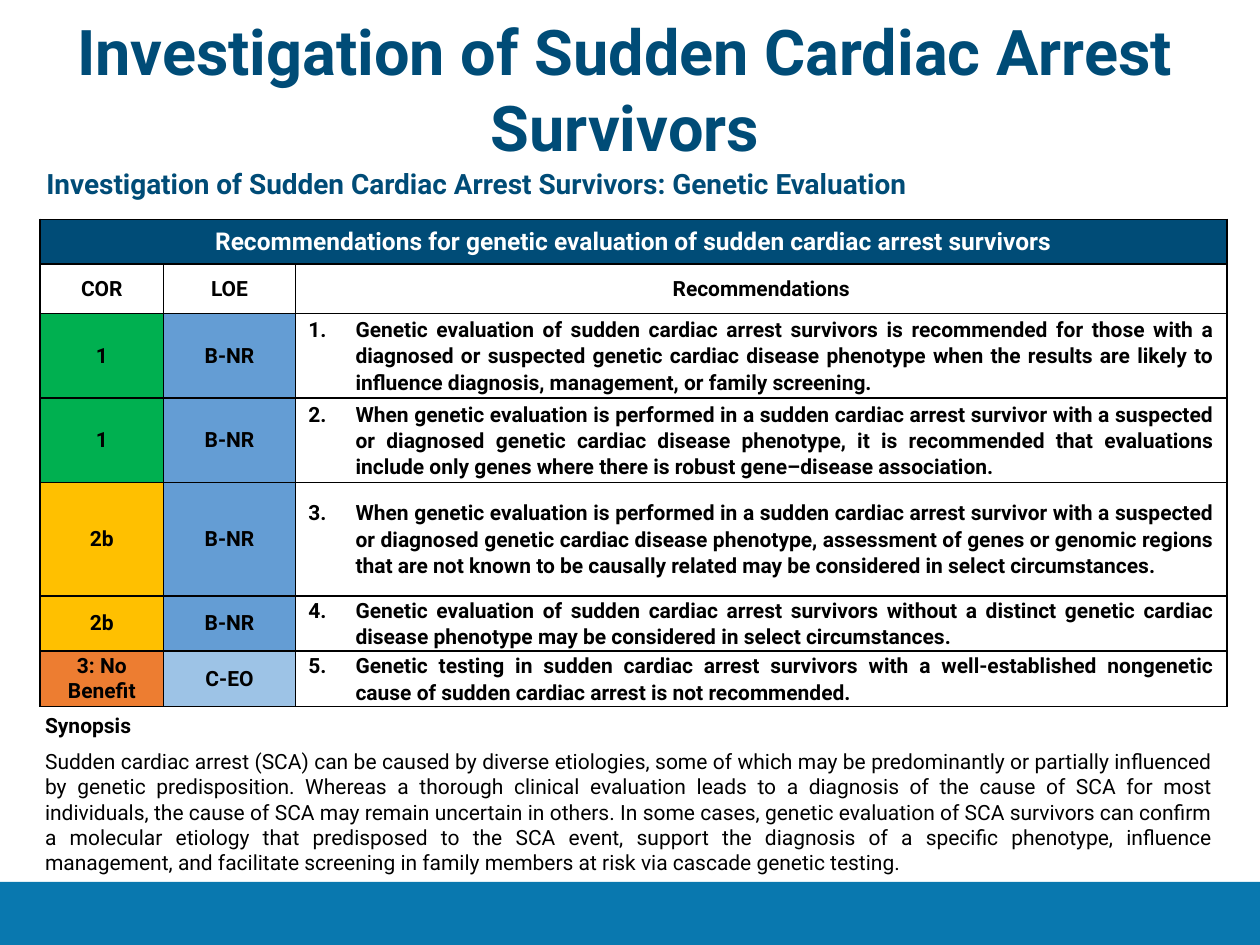
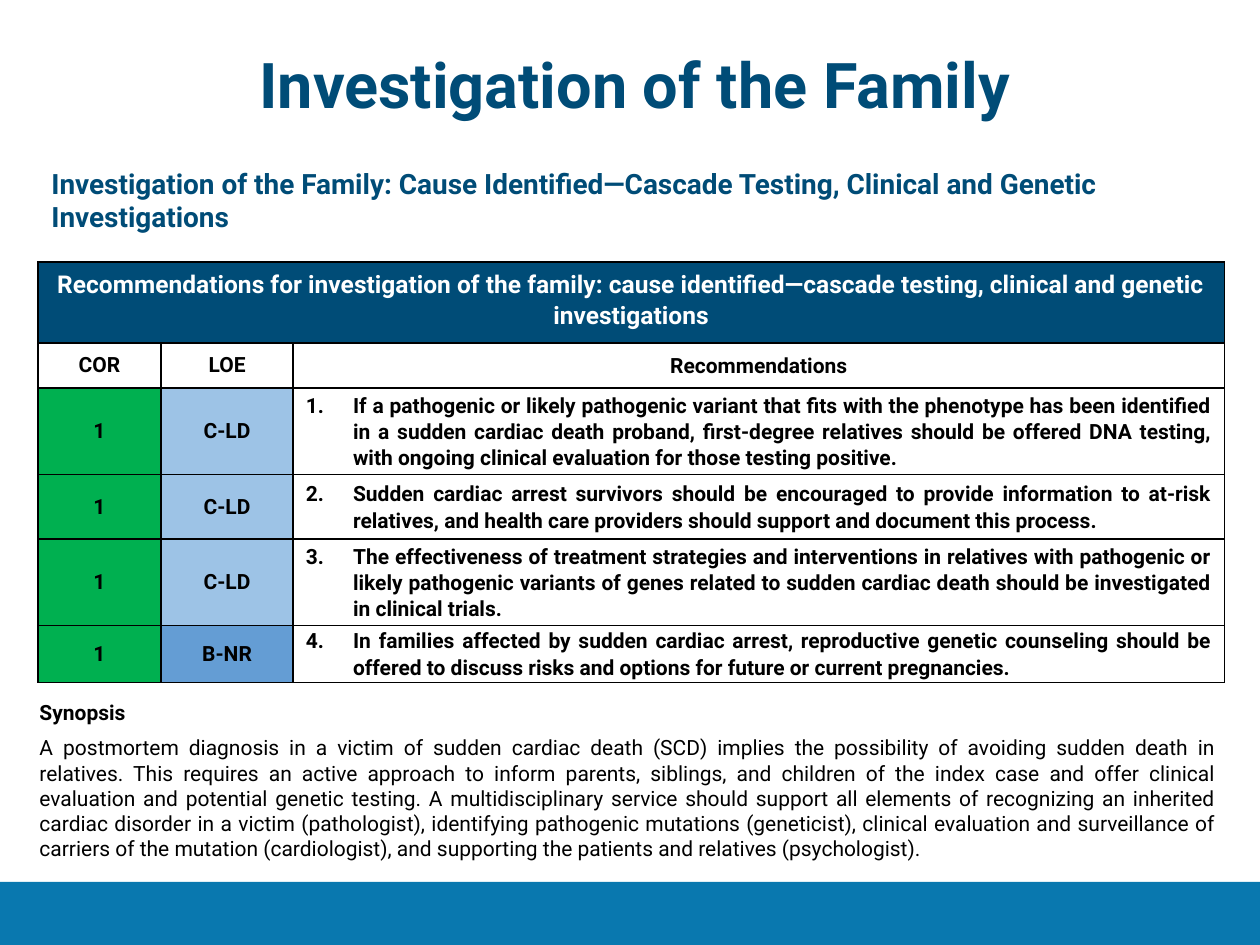
from lxml.etree import SubElement
from pptx import Presentation
from pptx.dml.color import RGBColor
from pptx.enum.shapes import MSO_SHAPE as Shape
from pptx.enum.text import MSO_ANCHOR as Anchor, MSO_AUTO_SIZE as Fit, PP_ALIGN as Align
from pptx.oxml.ns import qn
from pptx.util import Pt

FONT = "Roboto"
NAVY = RGBColor(0x00, 0x4C, 0x77)
BLUE = RGBColor(0x09, 0x78, 0xAF)
BLACK = RGBColor(0, 0, 0)
WHITE = RGBColor(255, 255, 255)
CLASS = {"1": RGBColor(0x00, 0xB0, 0x50), "2": RGBColor(0xFF, 0xC0, 0x00),
         "3": RGBColor(0xED, 0x7D, 0x31)}
LEVEL = {"B": RGBColor(0x64, 0x9D, 0xD4), "C": RGBColor(0x9D, 0xC3, 0xE6)}

WIDE, HIGH = 720, 540
BAND = (0, 504, WIDE, 36)
COLS = (70.4, 75.6, 532.1)
HEADS = ("COR", "LOE", "Recommendations")
HANG = 27
LOOSE = 1.07


def write(para, text, size, color=BLACK, bold=True, align=Align.LEFT):
    para.alignment = align
    run = para.add_run()
    run.text = text
    font = run.font
    font.name, font.size, font.bold = FONT, Pt(size), bold
    font.color.rgb = color


def add_text(slide, box):
    shape = slide.shapes.add_textbox(*map(Pt, box))
    frame = shape.text_frame
    frame.word_wrap = True
    frame.auto_size = Fit.SHAPE_TO_FIT_TEXT
    return frame


def add_band(slide):
    band = slide.shapes.add_shape(Shape.RECTANGLE, *map(Pt, BAND))
    band.shadow.inherit = False
    band.fill.solid()
    band.fill.fore_color.rgb = BLUE
    band.line.fill.background()


def add_title(slide, box, text):
    write(add_text(slide, box).paragraphs[0], text, 36, NAVY, align=Align.CENTER)


def add_topic(slide, box, text):
    write(add_text(slide, box).paragraphs[0], text, 16, NAVY)


def add_synopsis(slide, box, text):
    frame = add_text(slide, box)
    head, body = frame.paragraphs[0], frame.add_paragraph()
    head.space_after = body.space_after = Pt(6)
    write(head, "Synopsis", 12, align=Align.JUSTIFY)
    write(body, text, 12, bold=False, align=Align.JUSTIFY)


def style(cell, color=None, side=7.2, edge=0):
    """Give a cell its borders, fill and margins."""
    props = cell._tc.get_or_add_tcPr()
    for name in ("lnL", "lnR", "lnT", "lnB"):
        line = SubElement(props, qn(f"a:{name}"), w=str(Pt(1)))
        fill = SubElement(line, qn("a:solidFill"))
        SubElement(fill, qn("a:srgbClr"), val=str(BLACK))
    if color is None:
        cell.fill.background()
    else:
        cell.fill.solid()
        cell.fill.fore_color.rgb = color
    cell.margin_left = cell.margin_right = Pt(side)
    cell.margin_top = cell.margin_bottom = Pt(edge)


def label(cell, text, color=None):
    style(cell, color)
    cell.vertical_anchor = Anchor.MIDDLE
    write(cell.text_frame.paragraphs[0], text, 12, align=Align.CENTER)


def advise(cell, num, text):
    """Fill a cell with one numbered recommendation."""
    style(cell)
    cell.vertical_anchor = Anchor.MIDDLE
    para = cell.text_frame.paragraphs[0]
    para.line_spacing = LOOSE
    props = para._p.get_or_add_pPr()
    props.set("marL", str(Pt(HANG)))
    props.set("indent", str(-Pt(HANG)))
    SubElement(props, qn("a:buFont"), typeface="+mj-lt")
    SubElement(props, qn("a:buAutoNum"), type="arabicPeriod", startAt=str(num))
    write(para, text, 12, align=Align.JUSTIFY)


def add_grid(slide, left, top, heights, title, items):
    box = (left, top, sum(COLS), sum(heights))
    table = slide.shapes.add_table(len(heights), len(COLS), *map(Pt, box)).table
    table.first_row = table.horz_banding = False
    for col, width in zip(table.columns, COLS):
        col.width = Pt(width)
    for row, height in zip(table.rows, heights):
        row.height = Pt(height)

    for cell in table.rows[0].cells:
        style(cell, NAVY, 7.9, 3.6)
    table.cell(0, 0).merge(table.cell(0, len(COLS) - 1))
    para = table.cell(0, 0).text_frame.paragraphs[0]
    para.line_spacing, para.space_after = LOOSE, Pt(8)
    write(para, title, 14, WHITE, align=Align.CENTER)

    for cell, text in zip(table.rows[1].cells, HEADS):
        label(cell, text)
    last = table.cell(1, len(COLS) - 1).text_frame.paragraphs[0]
    last.line_spacing, last.space_after = LOOSE, Pt(8)

    for num, (cor, loe, text) in enumerate(items, 1):
        label(table.cell(num + 1, 0), cor, CLASS[cor[0]])
        label(table.cell(num + 1, 1), loe, LEVEL[loe[0]])
        advise(table.cell(num + 1, 2), num, text)


def add_page(deck, title, topic, grid, synopsis):
    slide = deck.slides.add_slide(deck.slide_layouts[6])
    add_band(slide)
    add_grid(slide, *grid)
    add_title(slide, *title)
    add_topic(slide, *topic)
    add_synopsis(slide, *synopsis)


SURVIVORS = (
    ("1", "B-NR", "Genetic evaluation of sudden cardiac arrest survivors is recommended for "
     "those with a diagnosed or suspected genetic cardiac disease phenotype when the results "
     "are likely to influence diagnosis, management, or family screening."),
    ("1", "B-NR", "When genetic evaluation is performed in a sudden cardiac arrest survivor "
     "with a suspected or diagnosed genetic cardiac disease phenotype, it is recommended that "
     "evaluations include only genes where there is robust gene–disease association."),
    ("2b", "B-NR", "When genetic evaluation is performed in a sudden cardiac arrest survivor "
     "with a suspected or diagnosed genetic cardiac disease phenotype, assessment of genes or "
     "genomic regions that are not known to be causally related may be considered in select "
     "circumstances."),
    ("2b", "B-NR", "Genetic evaluation of sudden cardiac arrest survivors without a distinct "
     "genetic cardiac disease phenotype may be considered in select circumstances."),
    ("3: No Benefit", "C-EO", "Genetic testing in sudden cardiac arrest survivors with a "
     "well-established nongenetic cause of sudden cardiac arrest is not recommended."),
)
FAMILY = (
    ("1", "C-LD", "If a pathogenic or likely pathogenic variant that fits with the phenotype "
     "has been identified in a sudden cardiac death proband, first-degree relatives should be "
     "offered DNA testing, with ongoing clinical evaluation for those testing positive."),
    ("1", "C-LD", "Sudden cardiac arrest survivors should be encouraged to provide information "
     "to at-risk relatives, and health care providers should support and document this "
     "process."),
    ("1", "C-LD", "The effectiveness of treatment strategies and interventions in relatives "
     "with pathogenic or likely pathogenic variants of genes related to sudden cardiac death "
     "should be investigated in clinical trials."),
    ("1", "B-NR", "In families affected by sudden cardiac arrest, reproductive genetic "
     "counseling should be offered to discuss risks and options for future or current "
     "pregnancies."),
)


def main():
    deck = Presentation()
    deck.slide_width, deck.slide_height = Pt(WIDE), Pt(HIGH)
    add_page(
        deck,
        ((13.7, 3.6, 686.9, 94.3), "Investigation of Sudden Cardiac Arrest Survivors"),
        ((19.4, 91.4, 678.2, 26.6),
         "Investigation of Sudden Cardiac Arrest Survivors: Genetic Evaluation"),
        (23, 125.3, (25.6, 28.4, 48.2, 48.2, 64.8, 31.7, 31.7),
         "Recommendations for genetic evaluation of sudden cardiac arrest survivors", SURVIVORS),
        ((18.7, 403.9, 681.8, 100.8),
         "Sudden cardiac arrest (SCA) can be caused by diverse etiologies, some of which may be "
         "predominantly or partially influenced by genetic predisposition. Whereas a thorough "
         "clinical evaluation leads to a diagnosis of the cause of SCA for most individuals, the "
         "cause of SCA may remain uncertain in others. In some cases, genetic evaluation of SCA "
         "survivors can confirm a molecular etiology that predisposed to the SCA event, support "
         "the diagnosis of a specific phenotype, influence management, and facilitate screening "
         "in family members at risk via cascade genetic testing."))
    add_page(
        deck,
        ((19.4, 22.3, 686.9, 51.1), "Investigation of the Family"),
        ((22.3, 91.4, 678.2, 46.1),
         "Investigation of the Family: Cause Identified—Cascade Testing, Clinical and Genetic "
         "Investigations"),
        (21.6, 149.8, (46.1, 25.9, 49.3, 37, 49.3, 32.6),
         "Recommendations for investigation of the family: cause identified—cascade testing, "
         "clinical and genetic investigations", FAMILY),
        ((15.5, 396, 686.9, 100.8),
         "A postmortem diagnosis in a victim of sudden cardiac death (SCD) implies the "
         "possibility of avoiding sudden death in relatives. This requires an active approach to "
         "inform parents, siblings, and children of the index case and offer clinical evaluation "
         "and potential genetic testing. A multidisciplinary service should support all elements "
         "of recognizing an inherited cardiac disorder in a victim (pathologist), identifying "
         "pathogenic mutations (geneticist), clinical evaluation and surveillance of carriers of "
         "the mutation (cardiologist), and supporting the patients and relatives (psychologist)."))
    deck.save("out.pptx")


if __name__ == "__main__":
    main()
